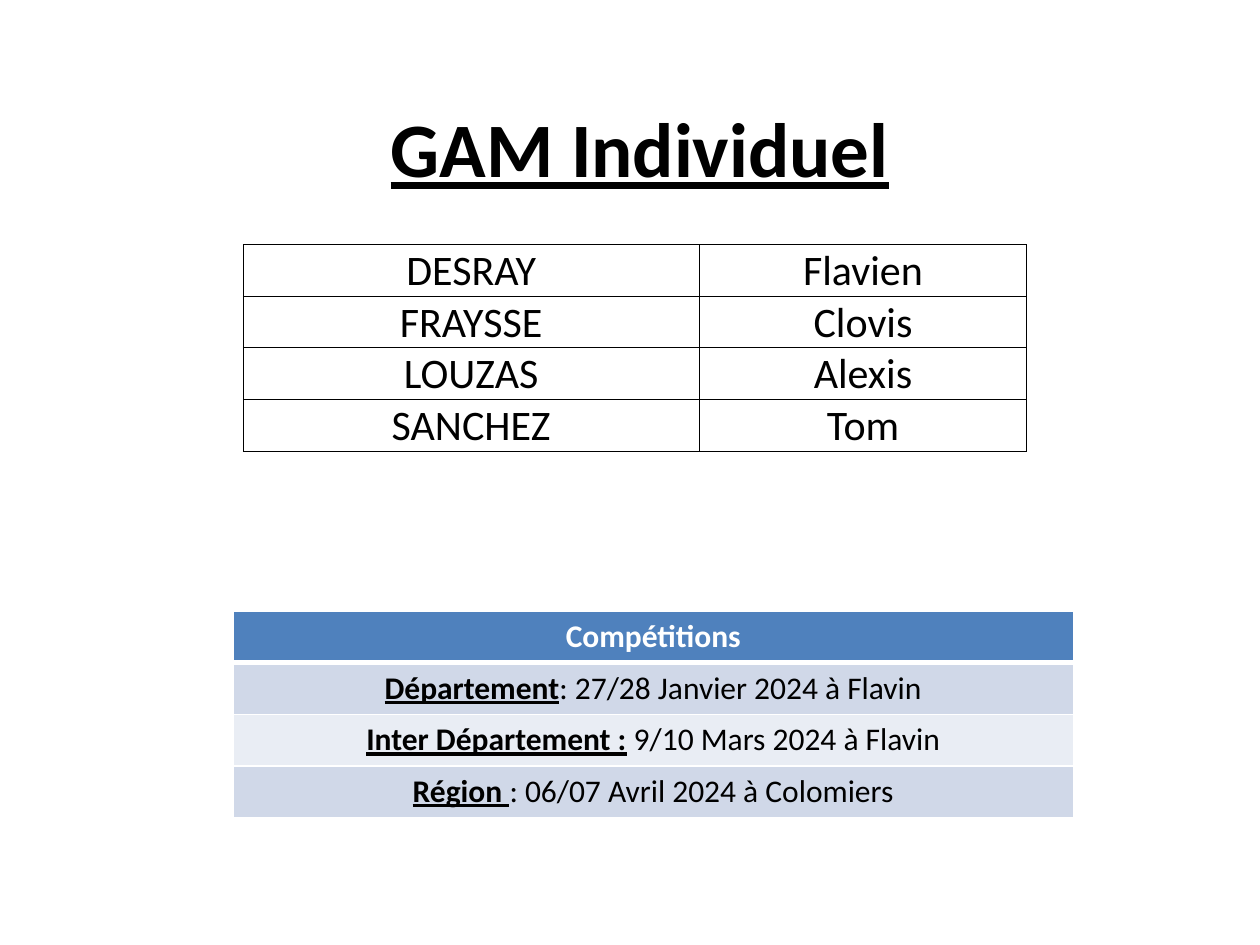
from lxml import etree
from pptx import Presentation
from pptx.dml.color import RGBColor
from pptx.enum.text import MSO_ANCHOR, PP_ALIGN
from pptx.oxml.ns import qn
from pptx.util import Inches, Pt

BLACK = RGBColor(0x00, 0x00, 0x00)
WHITE = RGBColor(0xFF, 0xFF, 0xFF)
BLUE = RGBColor(0x4F, 0x81, 0xBD)
BAND = RGBColor(0xD0, 0xD8, 0xE8)
PALE = RGBColor(0xE9, 0xED, 0xF4)
CENTER = PP_ALIGN.CENTER
MIDDLE, TOP, BOTTOM = MSO_ANCHOR.MIDDLE, MSO_ANCHOR.TOP, MSO_ANCHOR.BOTTOM
FONT = "Calibri"
WIDTH, HEIGHT = Inches(10), Inches(7.5)
ROW = Inches(0.41)

NAMES = [
    ("DESRAY", "Flavien"),
    ("FRAYSSE", "Clovis"),
    ("LOUZAS", "Alexis"),
    ("SANCHEZ", "Tom"),
]
EVENTS = [
    ("Département", ": 27/28 Janvier 2024 à Flavin"),
    ("Inter Département :", " 9/10 Mars 2024 à Flavin"),
    ("Région ", ": 06/07 Avril 2024 à Colomiers"),
]


def write(frame, text, size=18, color=BLACK, bold=False, under=False):
    """Add one centred run to the first paragraph."""
    para = frame.paragraphs[0]
    para.alignment = CENTER
    run = para.add_run()
    run.text = text
    font = run.font
    font.name, font.size = FONT, Pt(size)
    font.bold, font.underline = bold, under
    font.color.rgb = color


def edge(cell, color, **widths):
    """Draw cell borders; sides L, R, T, B give widths in points."""
    props = cell._tc.get_or_add_tcPr()
    for spot, side in enumerate("LRTB"):
        line = etree.Element(qn(f"a:ln{side}"), w=str(Pt(widths[side])))
        fill = etree.SubElement(line, qn("a:solidFill"))
        etree.SubElement(fill, qn("a:srgbClr"), val=str(color))
        props.insert(spot, line)


def grid(slide, left, top, cols, rows):
    """Add a plain table with the given column widths."""
    frame = slide.shapes.add_table(
        rows, len(cols), left, top, sum(cols), ROW * rows)
    table = frame.table
    table.first_row = table.horz_banding = False
    for col, width in zip(table.columns, cols):
        col.width = width
    return table


def add_title(slide):
    box = slide.shapes.add_textbox(
        Inches(0.83), Inches(0.36), int(WIDTH * 0.85), Inches(1.61))
    frame = box.text_frame
    frame.word_wrap = True
    frame.vertical_anchor = MIDDLE
    write(frame, "GAM Individuel", size=44, bold=True, under=True)


def add_names(slide):
    cols = [Inches(3.62), Inches(2.6)]
    table = grid(slide, Inches(1.93), Inches(1.94), cols, len(NAMES))
    for r, pair in enumerate(NAMES):
        for c, name in enumerate(pair):
            cell = table.cell(r, c)
            cell.fill.background()
            cell.vertical_anchor = BOTTOM
            cell.margin_left = cell.margin_right = Inches(0.01)
            cell.margin_top, cell.margin_bottom = Inches(0.01), 0
            edge(cell, BLACK, L=0.5, R=0.5, T=0.5, B=0.5)
            write(cell.text_frame, name, size=24)


def add_events(slide):
    table = grid(slide, Inches(1.85), Inches(4.85), [Inches(6.67)],
                 len(EVENTS) + 1)
    fills = [BLUE, BAND, PALE, BAND]
    for r, fill in enumerate(fills):
        cell = table.cell(r, 0)
        cell.fill.solid()
        cell.fill.fore_color.rgb = fill
        cell.vertical_anchor = TOP
        # The rule under the header is thicker
        edge(cell, WHITE, L=1, R=1, T=3 if r == 1 else 1,
             B=3 if r == 0 else 1)
    write(table.cell(0, 0).text_frame, "Compétitions", color=WHITE, bold=True)
    for r, (level, date) in enumerate(EVENTS, 1):
        frame = table.cell(r, 0).text_frame
        write(frame, level, bold=True, under=True)
        write(frame, date)


def main():
    deck = Presentation()
    deck.slide_width, deck.slide_height = WIDTH, HEIGHT
    slide = deck.slides.add_slide(deck.slide_layouts[6])
    add_title(slide)
    add_names(slide)
    add_events(slide)
    deck.save("out.pptx")


if __name__ == "__main__":
    main()
